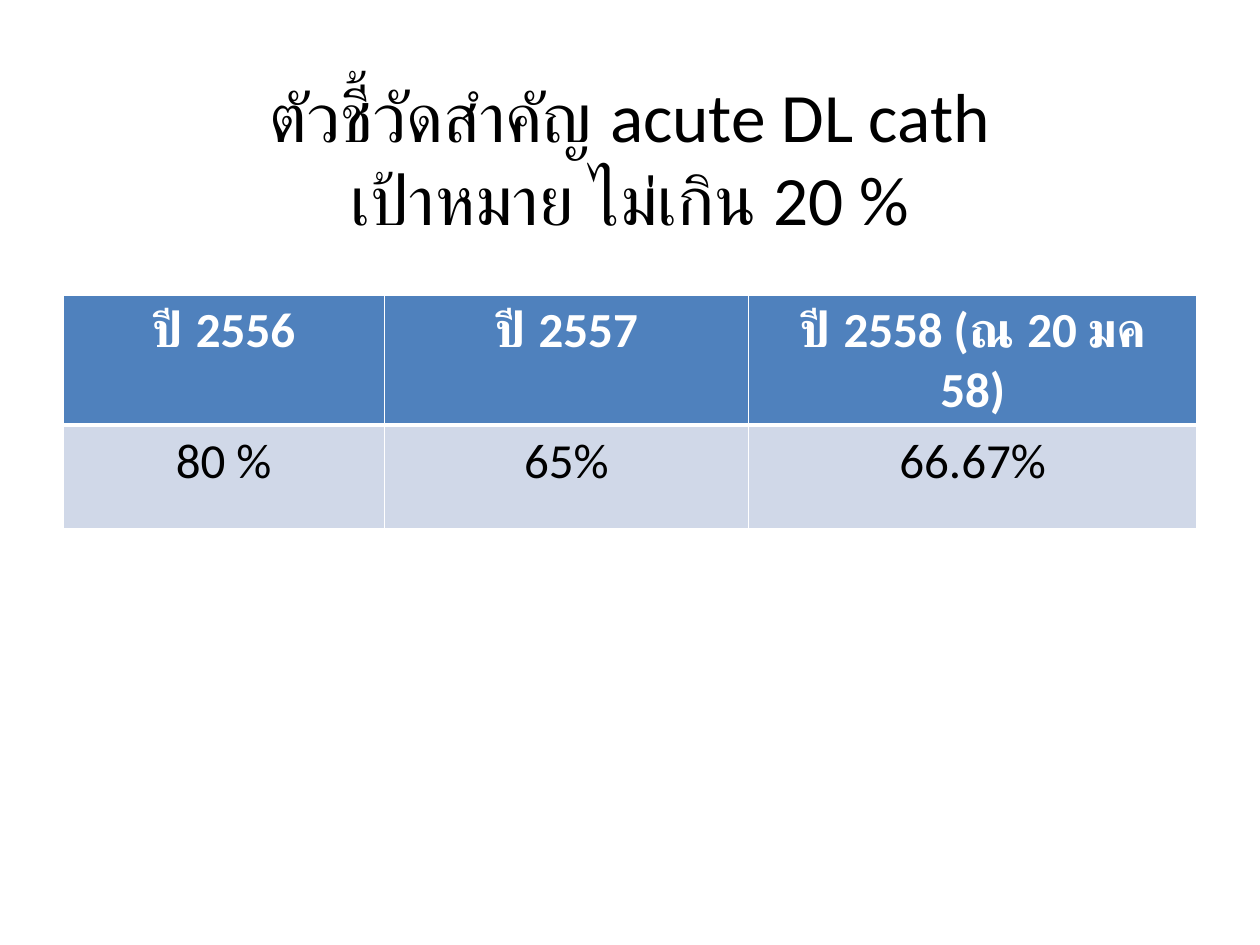
from lxml.etree import SubElement
from pptx import Presentation
from pptx.dml.color import RGBColor
from pptx.enum.text import MSO_ANCHOR, PP_ALIGN
from pptx.oxml.ns import qn
from pptx.util import Inches, Pt

WIDE, HIGH = 10, 7.5
FONT = "Calibri"
WHITE, BLACK, BLUE, PALE = "FFFFFF", "000000", "4F81BD", "D0D8E8"
TITLE = ["ตัวชี้วัดสำคัญ acute DL cath", "เป้าหมาย ไม่เกิน 20 %"]
YEARS = ["ปี 2556", "ปี 2557", "ปี 2558 (ณ 20 มค 58)"]
RATES = ["80 %", "65%", "66.67%"]
COLS = [0.255, 0.289, 0.356]


def color(code):
    return RGBColor.from_string(code)


def place(left, top, width, height):
    return [Inches(n) for n in (left * WIDE, top * HIGH, width * WIDE, height * HIGH)]


def add_run(para, text, size, code, bold=False):
    para.alignment = PP_ALIGN.CENTER
    run = para.add_run()
    run.text = text
    font = run.font
    font.name, font.size, font.bold = FONT, Pt(size), bold
    font.color.rgb = color(code)


def add_edge(cell, side, width):
    props = cell._tc.get_or_add_tcPr()
    line = SubElement(props, qn("a:ln" + side), w=str(Pt(width)))
    fill = SubElement(line, qn("a:solidFill"))
    SubElement(fill, qn("a:srgbClr"), val=WHITE)


def add_title(slide, box):
    frame = slide.shapes.add_textbox(*box).text_frame
    frame.word_wrap = True
    frame.vertical_anchor = MSO_ANCHOR.TOP
    frame.margin_top = Inches(0.28)
    para = frame.paragraphs[0]
    for row, text in enumerate(TITLE):
        if row:
            para.add_line_break()
        add_run(para, text, 39.6, BLACK)


def add_rates(slide, box):
    table = slide.shapes.add_table(2, len(COLS), *box).table
    for col, share in zip(table.columns, COLS):
        col.width = Inches(share * WIDE)
    for row, texts in enumerate([YEARS, RATES]):
        head = row == 0
        edges = {"L": 1, "R": 1, "T": 1 if head else 3, "B": 3 if head else 1}
        for col, text in enumerate(texts):
            cell = table.cell(row, col)
            for side, width in edges.items():
                add_edge(cell, side, width)
            cell.fill.solid()
            cell.fill.fore_color.rgb = color(BLUE if head else PALE)
            add_run(cell.text_frame.paragraphs[0], text, 28, WHITE if head else BLACK, head)


def main():
    deck = Presentation()
    deck.slide_width, deck.slide_height = Inches(WIDE), Inches(HIGH)
    slide = deck.slides.add_slide(deck.slide_layouts[6])
    add_title(slide, place(0.05, 0.04, 0.9, 1 / 6))
    add_rates(slide, place(0.05, 0.312, sum(COLS), 0.219))
    deck.save("out.pptx")


if __name__ == "__main__":
    main()
